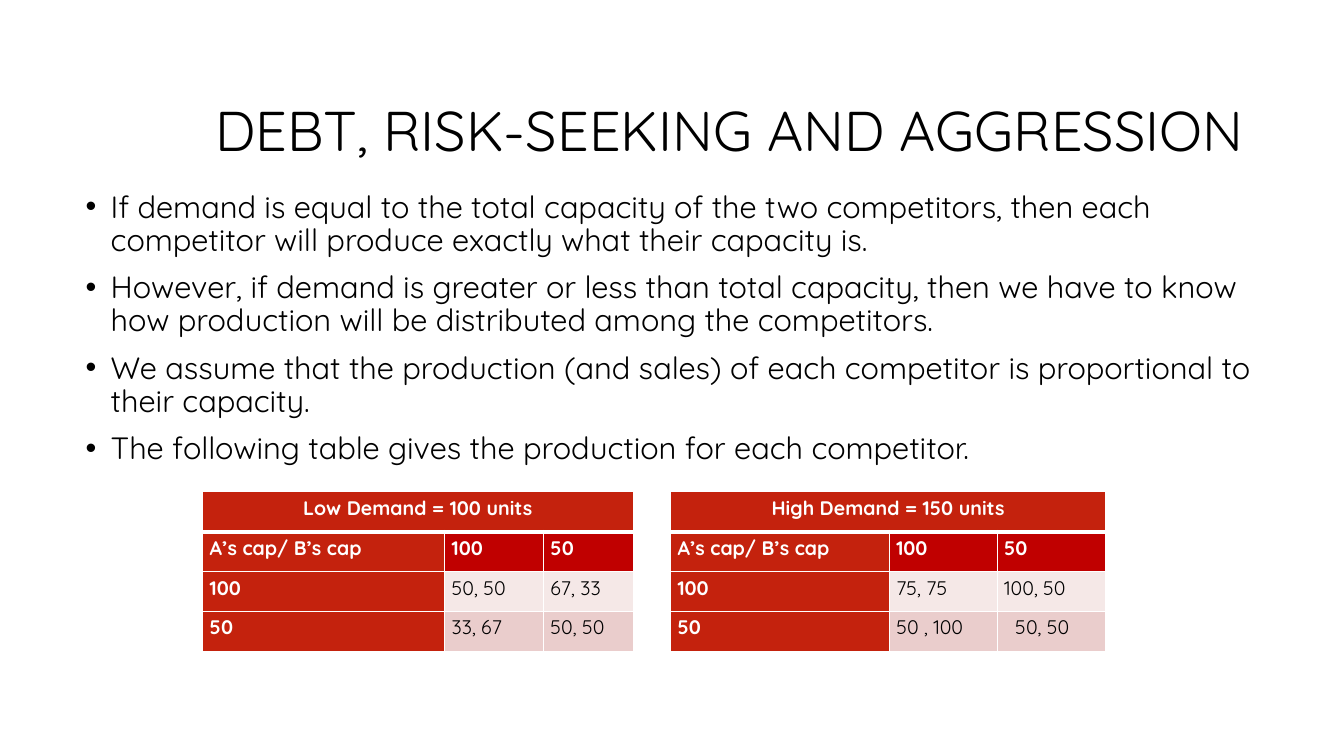
from pptx import Presentation
from pptx.dml.color import RGBColor as Rgb
from pptx.enum.text import MSO_ANCHOR as Anchor, PP_ALIGN as Align
from pptx.oxml import parse_xml
from pptx.oxml.ns import nsdecls
from pptx.util import Inches, Pt
from lxml.etree import SubElement
from pptx.oxml.ns import qn

TITLE = "DEBT, RISK-SEEKING AND AGGRESSION"
POINTS = [
    "If demand is equal to the total capacity of the two competitors, then each competitor will produce exactly what their capacity is.",
    "However, if demand is greater or less than total capacity, then we have to know how production will be distributed among the competitors.",
    "We assume that the production (and sales) of each competitor is proportional to their capacity.",
    "The following table gives the production for each competitor.",
]
CORNER = "A’s cap/ B’s cap"
TABLES = [
    {"left": 2.01, "cols": [2.4, 0.98, 0.89], "rows": [
        ["Low Demand = 100 units", "", ""],
        [CORNER, "100", "50"],
        ["100", "50, 50", "67, 33"],
        ["50", "33, 67", "50, 50"]]},
    {"left": 6.65, "cols": [2.17, 1.07, 1.08], "inset": {(3, 2): 0.18}, "rows": [
        ["High Demand = 150 units", "", ""],
        [CORNER, "100", "50"],
        ["100", "75, 75", "100, 50"],
        ["50", "50 , 100", "50, 50"]]},
]
THEME = {
    "font": "Quicksand", "ink": "000000", "white": "FFFFFF",
    "head": "C4220D", "cap": "C00000", "bands": ["F5E8E7", "EACDCC"],
    "title": 40, "body": 22, "cell": 14, "thin": 1, "thick": 3,
}
TOP, ROW = 4.88, 0.395


def style(para, size, color, bold=False):
    font = para.font
    font.name, font.size, font.bold = THEME["font"], Pt(size), bold
    font.color.rgb = Rgb.from_string(color)


def add_box(slide, left, top, width, height):
    frame = slide.shapes.add_textbox(*map(Inches, (left, top, width, height))).text_frame
    frame.word_wrap = True
    return frame


def add_bullet(para):
    props = para._p.get_or_add_pPr()
    props.set("marL", str(Inches(0.25)))
    props.set("indent", str(-Inches(0.25)))
    SubElement(props, qn("a:buFont")).set("typeface", "Arial")
    SubElement(props, qn("a:buChar")).set("char", "•")


def add_edges(cell, row):
    props = cell._tc.get_or_add_tcPr()
    thick = {"B": row == 0, "T": row == 1}
    for side in "LRTB":
        width = THEME["thick" if thick.get(side) else "thin"]
        props.append(parse_xml(
            f'<a:ln{side} {nsdecls("a")} w="{Pt(width)}"><a:solidFill>'
            f'<a:srgbClr val="{THEME["white"]}"/></a:solidFill></a:ln{side}>'))


def pick_fill(row, col):
    if row == 0 or col == 0:
        return THEME["head"]
    return THEME["cap"] if row == 1 else THEME["bands"][row - 2]


def add_grid(slide, data):
    rows, cols = data["rows"], data["cols"]
    grid = slide.shapes.add_table(
        len(rows), len(cols), Inches(data["left"]), Inches(TOP),
        Inches(sum(cols)), Inches(ROW * len(rows))).table
    for col, width in enumerate(cols):
        grid.columns[col].width = Inches(width)
    grid.cell(0, 0).merge(grid.cell(0, len(cols) - 1))
    for row, texts in enumerate(rows):
        grid.rows[row].height = Inches(ROW)
        for col, text in enumerate(texts):
            cell = grid.cell(row, col)
            cell.margin_left = Inches(data.get("inset", {}).get((row, col), 0.07))
            cell.margin_right = Inches(0.07)
            cell.margin_top = cell.margin_bottom = Inches(0.04)
            add_edges(cell, row)
            cell.fill.solid()
            cell.fill.fore_color.rgb = Rgb.from_string(pick_fill(row, col))
            para = cell.text_frame.paragraphs[0]
            para.text = text
            para.alignment = Align.LEFT if row else Align.CENTER
            head = row < 2 or col == 0
            style(para, THEME["cell"], THEME["white" if head else "ink"], head)


def main():
    deck = Presentation()
    deck.slide_width, deck.slide_height = Inches(13.33), Inches(7.5)
    slide = deck.slides.add_slide(deck.slide_layouts[6])

    frame = add_box(slide, 1.69, 0.79, 10.74, 1.06)
    frame.vertical_anchor = Anchor.MIDDLE
    para = frame.paragraphs[0]
    para.text, para.alignment, para.line_spacing = TITLE, Align.RIGHT, 0.9
    style(para, THEME["title"], THEME["ink"])

    frame = add_box(slide, 0.75, 1.85, 11.83, 5.32)
    for num, text in enumerate(POINTS):
        para = frame.add_paragraph() if num else frame.paragraphs[0]
        para.text, para.line_spacing = text, 0.9
        para.space_before = Pt(10 if num else 0)
        add_bullet(para)
        style(para, THEME["body"], THEME["ink"])

    for data in TABLES:
        add_grid(slide, data)
    deck.save("out.pptx")


if __name__ == "__main__":
    main()
